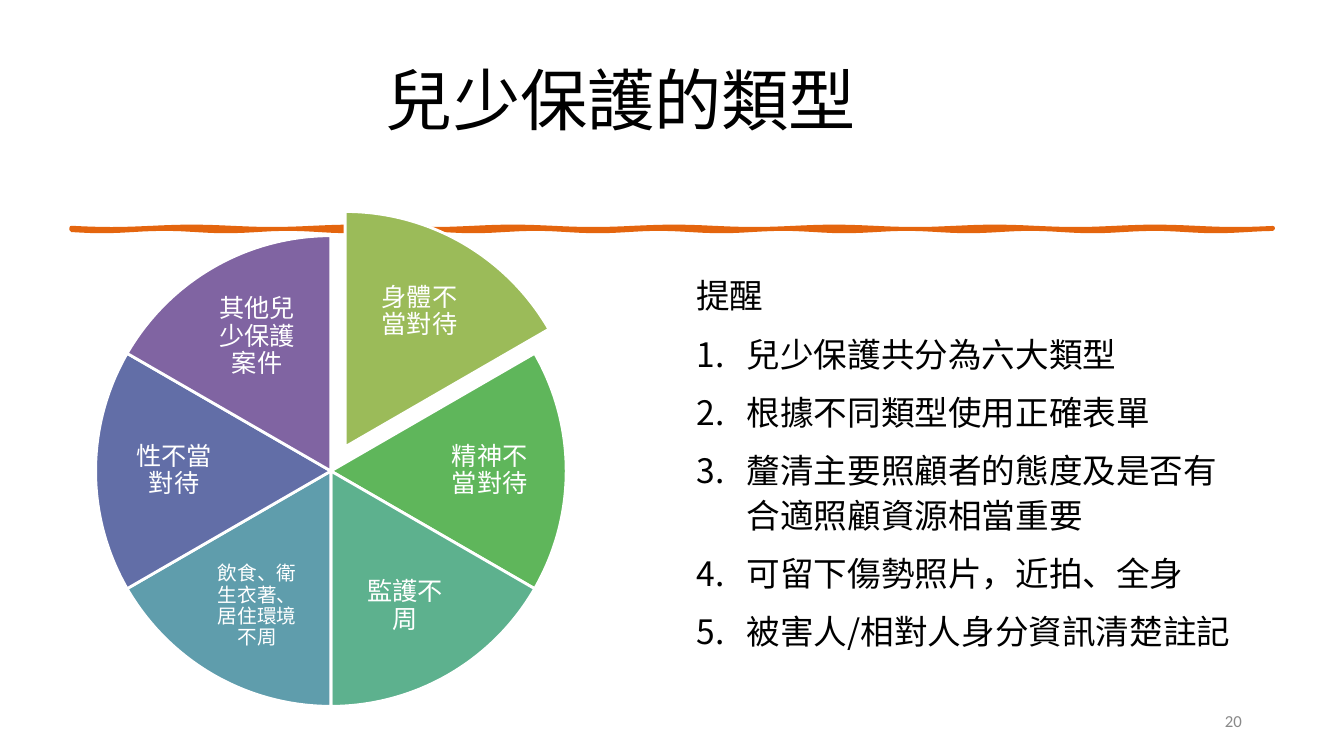
import math
from dataclasses import dataclass

import lxml.etree
import pptx
import pptx.dml.color
import pptx.enum.shapes
import pptx.enum.text
import pptx.oxml.ns
import pptx.util

Cm = pptx.util.Cm
Pt = pptx.util.Pt
qn = pptx.oxml.ns.qn
ALIGN = pptx.enum.text.PP_ALIGN
ANCHOR = pptx.enum.text.MSO_ANCHOR

COLORS = {
    "text": "000000",
    "white": "FFFFFF",
    "number": "898989",
    "rule": "E4650E",
    "physical": "9BBB59",
    "mental": "5FB65B",
    "custody": "5DB18E",
    "living": "5F9DAC",
    "sexual": "626EA7",
    "other": "8064A2",
}
FONT_TC = "Noto Sans CJK TC"
FONT_SC = "Noto Sans CJK SC"

PIE_LEFT, PIE_TOP, PIE_SIZE = 2.41, 5.94, 11.86
FIRST_ANGLE, SWEEP, FULL_TURN = 162, 36, 216
RULE_LEFT, RULE_TOP, RULE_WIDTH, RULE_STEPS = 1.8, 5.77, 30.28, 120


@dataclass
class Box:
    left: float
    top: float
    width: float
    height: float


@dataclass
class Style:
    size: float
    font: str
    color: str
    align: ALIGN = ALIGN.LEFT
    anchor: ANCHOR = ANCHOR.MIDDLE
    inset: float | None = None
    line_spacing: float = 1.0
    space_before: float = 0


@dataclass
class Slice:
    label: str
    color: str
    box: Box
    size: float = 18
    inset: float = 0.08
    dx: float = 0
    dy: float = 0


SLICES = [
    Slice("身體不當對待", "physical", Box(9.35, 6.96, 2.44, 1.8), dx=0.36, dy=-0.61),
    Slice("精神不當對待", "mental", Box(11.07, 11.02, 2.54, 1.7)),
    Slice("監護不周", "custody", Box(8.99, 14.38, 2.44, 1.8)),
    Slice("飲食、衛生衣著、居住環境不周", "living", Box(5.26, 14.38, 2.44, 1.8), size=14, inset=0.05),
    Slice("性不當對待", "sexual", Box(3.12, 11.02, 2.54, 1.7)),
    Slice("其他兒少保護案件", "other", Box(5.26, 7.59, 2.44, 1.8)),
]
REMINDERS = [
    "兒少保護共分為六大類型",
    "根據不同類型使用正確表單",
    "釐清主要照顧者的態度及是否有合適照顧資源相當重要",
    "可留下傷勢照片，近拍、全身",
    "被害人/相對人身分資訊清楚註記",
]


def rgb(name: str) -> pptx.dml.color.RGBColor:
    return pptx.dml.color.RGBColor.from_string(COLORS[name])


def paint(sp, fill: str, line: str, width: float) -> None:
    sp.shadow.inherit = False
    sp.fill.solid()
    sp.fill.fore_color.rgb = rgb(fill)
    sp.line.color.rgb = rgb(line)
    sp.line.width = Pt(width)


def add_paragraph(p, text: str, style: Style) -> None:
    p.alignment = style.align
    p.line_spacing = style.line_spacing
    p.space_before = Pt(style.space_before)
    r = p.add_run()
    r.text = text
    r.font.size = Pt(style.size)
    r.font.color.rgb = rgb(style.color)
    r.font.name = style.font
    ea = lxml.etree.SubElement(r.font._element, qn("a:ea"))
    ea.set("typeface", style.font)


def number_paragraph(p) -> None:
    pPr = p._p.get_or_add_pPr()
    pPr.set("marL", str(Cm(1.27)))
    pPr.set("indent", str(-Cm(1.27)))
    lxml.etree.SubElement(pPr, qn("a:buAutoNum")).set("type", "arabicPeriod")


def add_text(slide, box: Box, text: str, style: Style):
    sp = slide.shapes.add_textbox(Cm(box.left), Cm(box.top), Cm(box.width), Cm(box.height))
    tf = sp.text_frame
    tf.word_wrap = True
    tf.vertical_anchor = style.anchor
    if style.inset is not None:
        tf.margin_left = tf.margin_right = Cm(style.inset)
        tf.margin_top = tf.margin_bottom = Cm(style.inset)
    add_paragraph(tf.paragraphs[0], text, style)
    return tf


def add_wavy_rule(slide) -> None:
    upper, lower = [], []
    for i in range(RULE_STEPS + 1):
        t = i / RULE_STEPS
        x = Cm(RULE_LEFT + RULE_WIDTH * t)
        upper.append((x, Cm(RULE_TOP - 0.03 + 0.03 * math.sin(47 * t))))
        lower.append((x, Cm(RULE_TOP + 0.03 + 0.03 * math.sin(61 * t))))
    builder = slide.shapes.build_freeform(*upper[0])
    builder.add_line_segments(upper[1:] + lower[::-1], close=True)
    paint(builder.convert_to_shape(), "rule", "rule", 2.75)


def add_slice(slide, index: int, part: Slice) -> None:
    sp = slide.shapes.add_shape(
        pptx.enum.shapes.MSO_SHAPE.PIE,
        Cm(PIE_LEFT + part.dx), Cm(PIE_TOP + part.dy), Cm(PIE_SIZE), Cm(PIE_SIZE),
    )
    start = FIRST_ANGLE + SWEEP * index
    sp.adjustments[0] = start % FULL_TURN
    sp.adjustments[1] = (start + SWEEP) % FULL_TURN
    paint(sp, part.color, "white", 2)
    style = Style(part.size, FONT_SC, "white", ALIGN.CENTER, inset=part.inset, line_spacing=0.9)
    add_text(slide, part.box, part.label, style)


def main() -> None:
    prs = pptx.Presentation()
    prs.slide_width, prs.slide_height = Cm(33.87), Cm(19.05)
    slide = prs.slides.add_slide(prs.slide_layouts[6])

    add_wavy_rule(slide)
    add_text(slide, Box(4.22, 0.89, 22.86, 3.18), "兒少保護的類型",
             Style(48, FONT_TC, "text", ALIGN.CENTER))

    body = Style(24, FONT_TC, "text", anchor=ANCHOR.TOP, line_spacing=1.1, space_before=10)
    tf = add_text(slide, Box(17.3, 6.71, 14.25, 10.36), "提醒", body)
    for reminder in REMINDERS:
        p = tf.add_paragraph()
        add_paragraph(p, reminder, body)
        number_paragraph(p)

    add_text(slide, Box(23.93, 17.65, 7.62, 1.02), "20",
             Style(12, "Calibri", "number", ALIGN.RIGHT))
    for index, part in enumerate(SLICES):
        add_slice(slide, index, part)

    prs.save("out.pptx")


if __name__ == "__main__":
    main()
